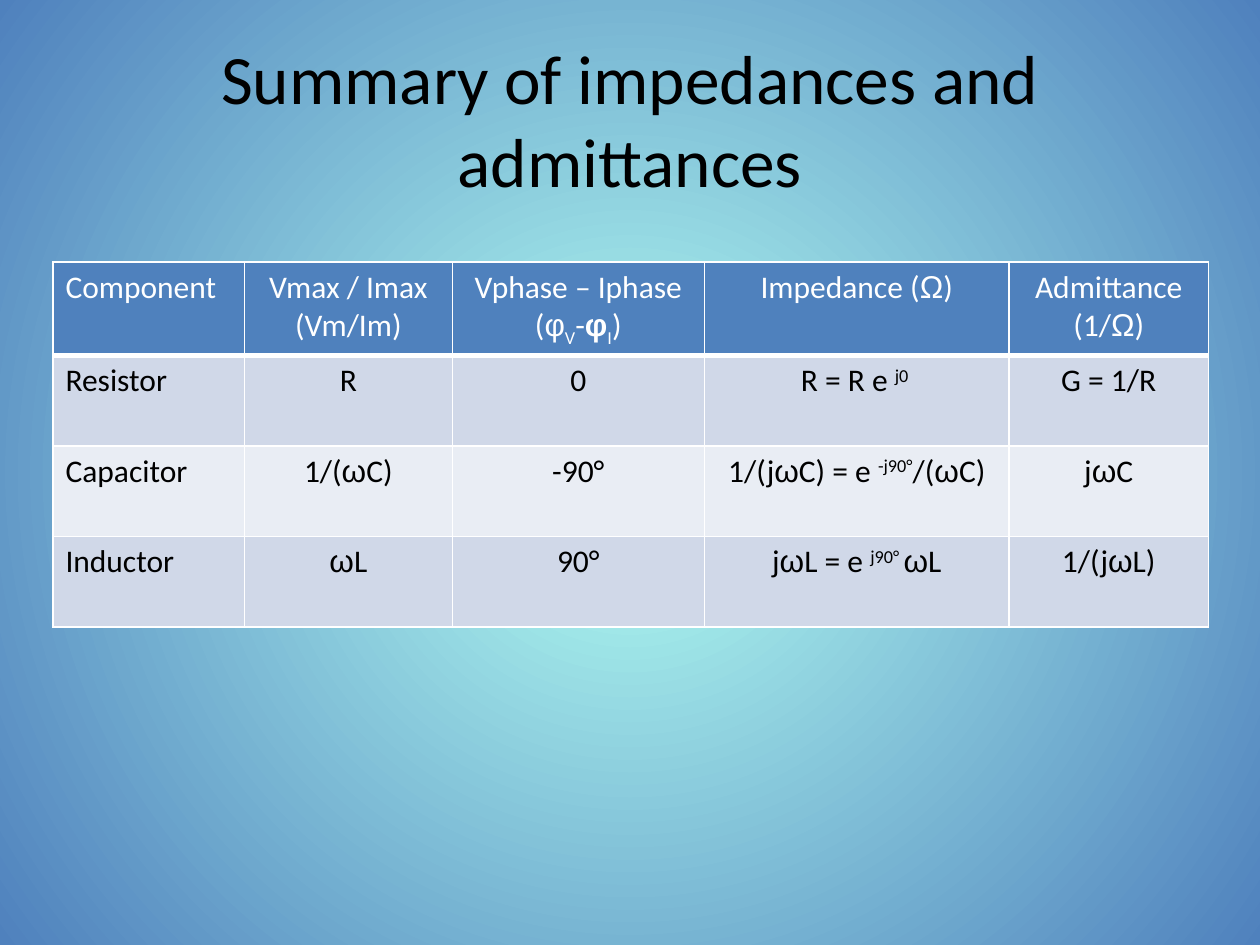
"""Build a slide summarising impedances and admittances of basic components."""
from dataclasses import dataclass
from itertools import groupby

from pptx import Presentation
from pptx.dml.color import RGBColor
from pptx.enum.text import MSO_ANCHOR as Anchor, PP_ALIGN as Align
from pptx.oxml import parse_xml
from pptx.oxml.ns import nsdecls
from pptx.slide import Slide
from pptx.table import _Cell as Cell
from pptx.text.text import _Paragraph as Paragraph
from pptx.util import Inches, Pt

COLORS = {
    "glow": "B3FFF2",
    "header": "4F81BD",
    "band": "D0D8E8",
    "pale": "E9EDF4",
    "light": "FFFFFF",
    "dark": "000000",
}
WIDTH, HEIGHT = Inches(10), Inches(7.5)
COLUMNS = (0.152, 0.165, 0.2, 0.242, 0.158)
ROW_HEIGHT = 0.096
GREEK = "φωΩ"


@dataclass(frozen=True)
class Span:
    text: str
    baseline: int = 0
    bold: bool = False


@dataclass(frozen=True)
class Row:
    fill: str
    ink: str
    rule: float
    cells: tuple[tuple[Span, ...], ...]


def plain(*texts: str) -> tuple[tuple[Span, ...], ...]:
    """Turn each text into a cell of one ordinary span."""
    return tuple((Span(text),) for text in texts)


def sup(text: str) -> Span:
    """Return a superscript span."""
    return Span(text, 30000)


def sub(text: str) -> Span:
    """Return a subscript span."""
    return Span(text, -25000)


PHASE = (Span("Vphase – Iphase (φ"), sub("V"), Span("-"),
         Span("φ", bold=True), sub("I"), Span(")"))
RESISTOR = (Span("R = R e "), sup("j0 "))
CAPACITOR = (Span("1/(jωC) = e "), sup("-j90°"), Span("/(ωC)"))
INDUCTOR = (Span("jωL = e "), sup("j90° "), Span("ωL"))

ROWS = (
    Row("header", "light", 3, (
        *plain("Component", "Vmax / Imax (Vm/Im)"), PHASE,
        *plain("Impedance (Ω)", "Admittance (1/Ω)"))),
    Row("band", "dark", 1, (
        *plain("Resistor", "R", "0"), RESISTOR, *plain("G = 1/R"))),
    Row("pale", "dark", 1, (
        *plain("Capacitor", "1/(ωC)", "-90°"), CAPACITOR, *plain("jωC"))),
    Row("band", "dark", 1, (
        *plain("Inductor", "ωL", "90°"), INDUCTOR, *plain("1/(jωL)"))),
)


def write(para: Paragraph, spans: tuple[Span, ...], size: float, ink: str) -> None:
    """Write spans as runs, with Greek letters in their own font."""
    for span in spans:
        for greek, letters in groupby(span.text, lambda letter: letter in GREEK):
            run = para.add_run()
            run.text = "".join(letters)
            style = {"name": "Arial" if greek else "Calibri",
                     "size": Pt(size), "bold": span.bold}
            for key, value in style.items():
                setattr(run.font, key, value)
            run.font.color.rgb = RGBColor.from_string(COLORS[ink])
            if span.baseline:
                run._r.get_or_add_rPr().set("baseline", str(span.baseline))


def paint_background(page: Slide) -> None:
    """Fill the page with a glow spreading from its centre."""
    stops = "".join(
        f'<a:gs pos="{place}"><a:srgbClr val="{COLORS[name]}"/></a:gs>'
        for place, name in ((0, "glow"), (100000, "header")))
    page._element.cSld.insert(0, parse_xml(
        f'<p:bg {nsdecls("p", "a")}><p:bgPr><a:gradFill rotWithShape="1">'
        f'<a:gsLst>{stops}</a:gsLst><a:path path="circle">'
        '<a:fillToRect l="50000" t="50000" r="50000" b="50000"/></a:path>'
        '</a:gradFill><a:effectLst/></p:bgPr></p:bg>'))


def add_title(page: Slide, text: str) -> None:
    """Add the centred title."""
    box = page.shapes.add_textbox(
        int(0.05 * WIDTH), int(0.04 * HEIGHT), int(0.9 * WIDTH), int(0.17 * HEIGHT))
    frame = box.text_frame
    for key, value in {"word_wrap": True, "vertical_anchor": Anchor.MIDDLE}.items():
        setattr(frame, key, value)
    para = frame.paragraphs[0]
    para.alignment = Align.CENTER
    write(para, (Span(text),), 39.6, "dark")


def style_cell(cell: Cell, row: Row) -> None:
    """Give a cell its white borders and its fill."""
    borders = {"lnL": 1, "lnR": 1, "lnT": 1, "lnB": row.rule}
    properties = cell._tc.get_or_add_tcPr()
    for tag, width in borders.items():
        properties.append(parse_xml(
            f'<a:{tag} {nsdecls("a")} w="{Pt(width)}"><a:solidFill>'
            f'<a:srgbClr val="{COLORS["light"]}"/></a:solidFill></a:{tag}>'))
    cell.fill.solid()
    cell.fill.fore_color.rgb = RGBColor.from_string(COLORS[row.fill])


def add_summary(page: Slide) -> None:
    """Add the table of components."""
    table = page.shapes.add_table(
        len(ROWS), len(COLUMNS), int(0.042 * WIDTH), int(0.277 * HEIGHT),
        int(sum(COLUMNS) * WIDTH), int(len(ROWS) * ROW_HEIGHT * HEIGHT)).table
    for column, share in zip(table.columns, COLUMNS):
        column.width = int(share * WIDTH)
    for line, row in zip(table.rows, ROWS):
        line.height = int(ROW_HEIGHT * HEIGHT)
        for index, (cell, spans) in enumerate(zip(line.cells, row.cells)):
            style_cell(cell, row)
            para = cell.text_frame.paragraphs[0]
            para.alignment = Align.CENTER if index else Align.LEFT
            write(para, spans, 18, row.ink)


def main() -> None:
    """Build and save the deck."""
    deck = Presentation()
    for key, value in {"slide_width": WIDTH, "slide_height": HEIGHT}.items():
        setattr(deck, key, value)
    page = deck.slides.add_slide(deck.slide_layouts[6])
    paint_background(page)
    add_title(page, "Summary of impedances and admittances")
    add_summary(page)
    deck.save("out.pptx")


if __name__ == "__main__":
    main()
